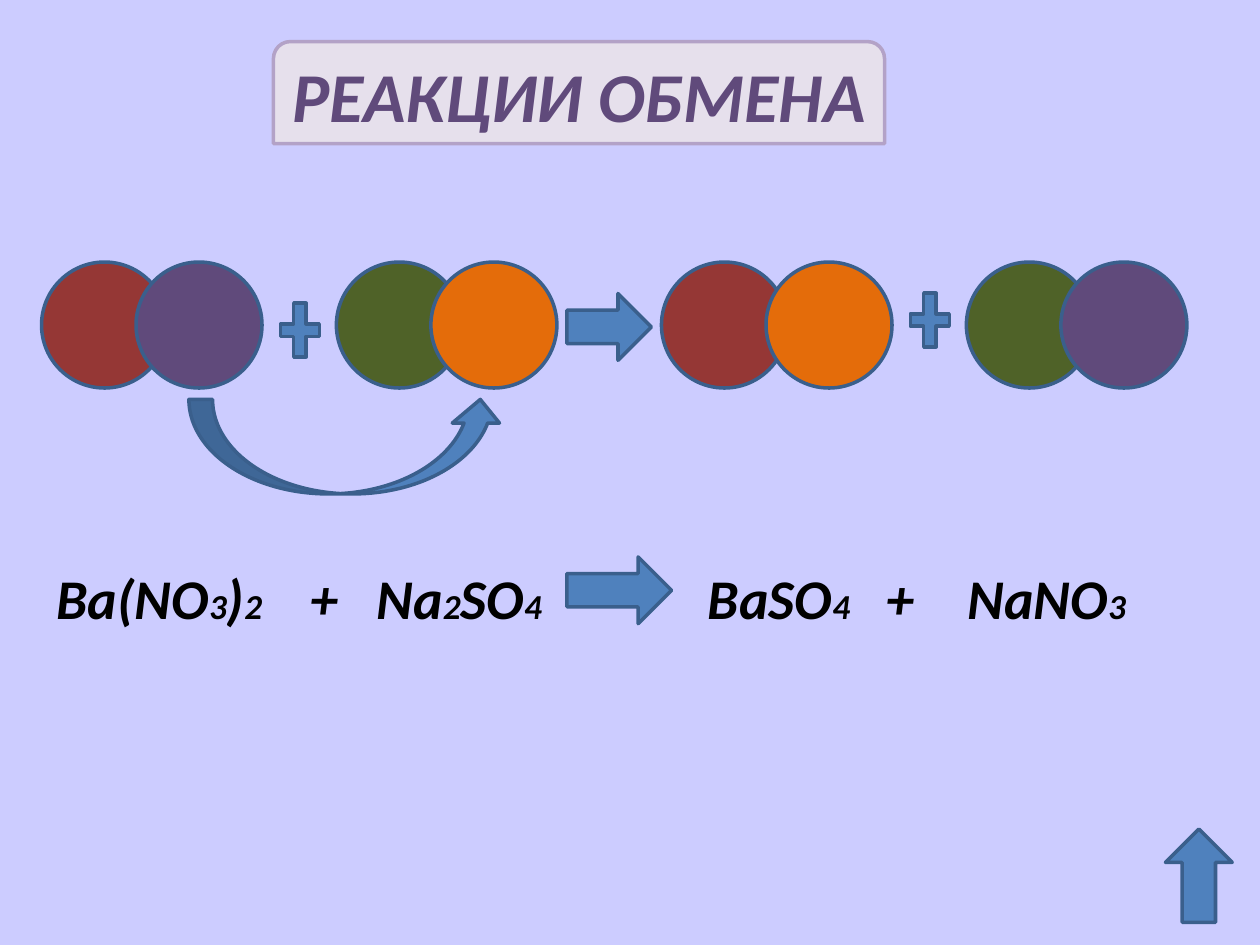
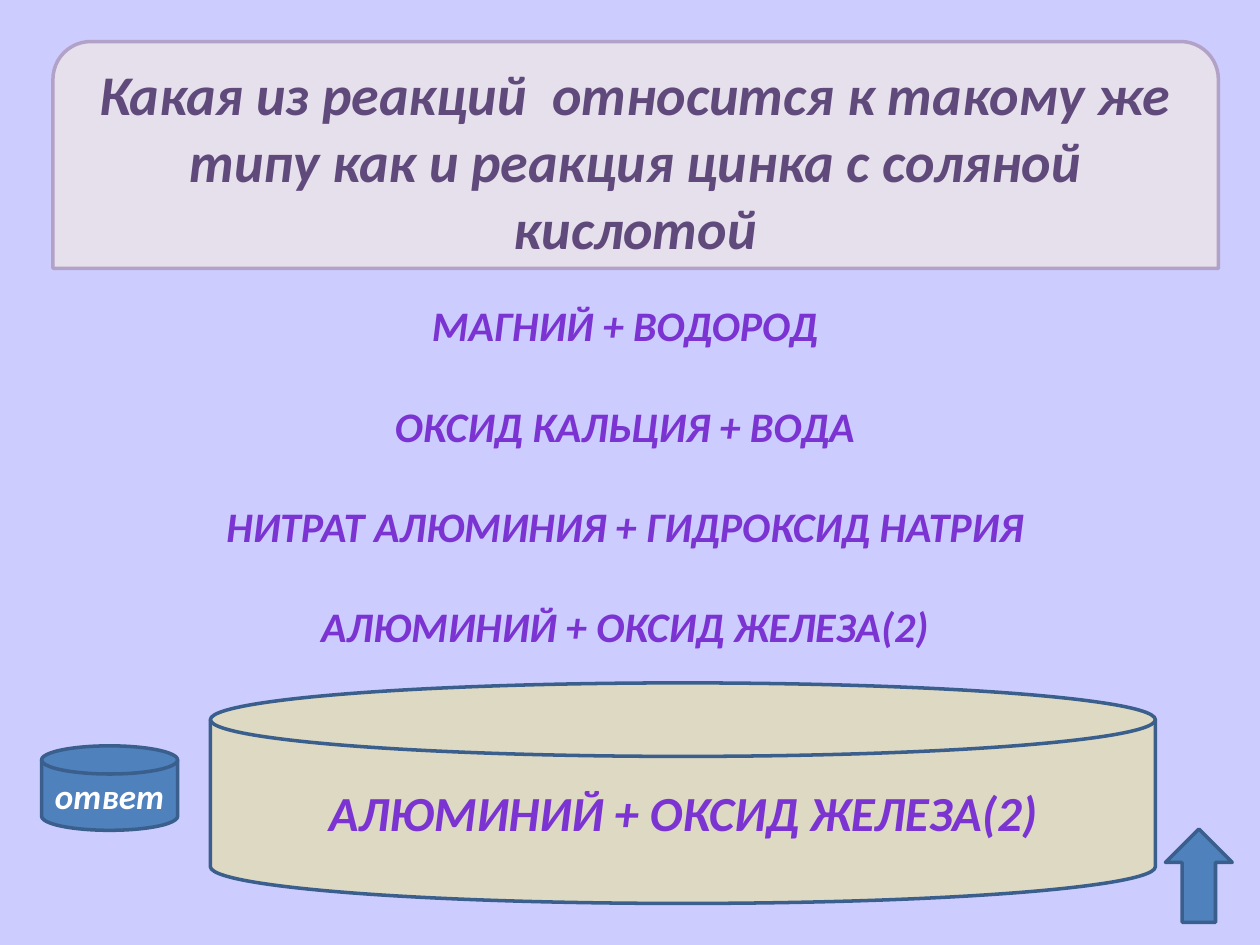
from itertools import groupby

from pptx import Presentation
from pptx.dml.color import RGBColor
from pptx.enum.shapes import MSO_SHAPE as Preset
from pptx.enum.text import MSO_ANCHOR as Anchor, MSO_AUTO_SIZE as AutoSize, PP_ALIGN as Align
from pptx.oxml import parse_xml
from pptx.oxml.ns import nsdecls
from pptx.util import Inches, Pt

COLORS = {
    "background": "CCCCFF", "banner": "E6E0EC", "banner_line": "B3A2C7",
    "title": "604A7B", "title_outline": "7EA6EA",
    "blue": "4F81BD", "blue_line": "3A5F8C", "sand": "DDD9C3",
    "red": "953735", "violet": "604A7B", "green": "4F6228", "orange": "E46C0A",
    "answer_outline": "5E457C", "black": "000000", "white": "FFFFFF",
}
FONT = "Calibri"
ANSWER_GRADIENT = [(0, "3D1B67"), (43, "7B34D2"), (48, "7330C4"), (100, "3D1B67")]
TITLE_STYLE = {"color": "title", "outline": ("title_outline", 2.48)}
ANSWER_STYLE = {"gradient": ANSWER_GRADIENT, "outline": ("answer_outline", 0.71)}

EXCHANGE_TITLE = "РЕАКЦИИ ОБМЕНА"
MOLECULES = [
    (0.33, 0.75, "red", "violet"),
    (2.67, 0.75, "green", "orange"),
    (5.25, 0.83, "red", "orange"),
    (7.67, 0.75, "green", "violet"),
]
EXCHANGE_SIGNS = [
    (Preset.MATH_PLUS, (2.17, 2.33, 0.42, 0.58)),
    (Preset.MATH_PLUS, (7.17, 2.25, 0.42, 0.58)),
    (Preset.RIGHT_ARROW, (4.5, 2.33, 0.67, 0.53)),
    (Preset.CURVED_UP_ARROW, (1.5, 3.17, 2.5, 0.75)),
    (Preset.RIGHT_ARROW, (4.5, 4.42, 0.83, 0.53)),
]
EQUATION = ["Ba(NO3)2", "+", "Na2SO4", "BaSO4", "+", "NaNO3"]
EQUATION_TABS = [2.12, 2.64, 5.27, 6.69, 7.33]

QUESTION = "Какая из реакций  относится к такому же типу как и реакция цинка с соляной кислотой"
REACTIONS = [
    "МАГНИЙ + ВОДОРОД",
    "ОКСИД КАЛЬЦИЯ + ВОДА",
    "НИТРАТ АЛЮМИНИЯ + ГИДРОКСИД НАТРИЯ",
    "АЛЮМИНИЙ + ОКСИД ЖЕЛЕЗА(2)",
]
ANSWER_LABEL = "ответ"


def rgb(name):
    return RGBColor.from_string(COLORS[name])


def box(values):
    return [Inches(value) for value in values]


def place(shape, values):
    shape.left, shape.top, shape.width, shape.height = box(values)


def add_text(paragraph, text, size=32, color="black", gradient=None, outline=None, align=None):
    if align is not None:
        paragraph.alignment = align
    run = paragraph.add_run()
    run.text = text
    font = run.font
    font.name, font.size, font.bold, font.italic = FONT, Pt(size), True, True
    properties = run._r.get_or_add_rPr()
    if gradient:
        stops = "".join(
            f'<a:gs pos="{position * 1000}"><a:srgbClr val="{value}"/></a:gs>'
            for position, value in gradient
        )
        properties.insert(0, parse_xml(
            f'<a:gradFill {nsdecls("a")}><a:gsLst>{stops}</a:gsLst>'
            '<a:lin ang="5400000" scaled="0"/></a:gradFill>'
        ))
    else:
        font.color.rgb = rgb(color)
    if outline:
        name, width = outline
        properties.insert(0, parse_xml(
            f'<a:ln {nsdecls("a")} w="{Pt(width)}"><a:solidFill>'
            f'<a:srgbClr val="{COLORS[name]}"/></a:solidFill></a:ln>'
        ))


def add_shape(slide, preset, position, fill="blue", line="blue_line"):
    shape = slide.shapes.add_shape(preset, *box(position))
    shape.shadow.inherit = False
    shape.fill.solid()
    shape.fill.fore_color.rgb = rgb(fill)
    shape.line.color.rgb = rgb(line)
    shape.line.width = Pt(2)
    return shape


def prepare_frame(shape, wrap=True):
    frame = shape.text_frame
    frame.auto_size = AutoSize.NONE
    frame.word_wrap = wrap
    frame.vertical_anchor = Anchor.TOP
    return frame


def add_title(slide, text, position, size, wrap=True):
    banner = add_shape(slide, Preset.ROUND_2_SAME_RECTANGLE, position, "banner", "banner_line")
    slide.shapes._spTree.insert(2, banner._element)
    left, top, width, height = position
    inset = height * 0.05
    title = slide.shapes.title
    place(title, (left + inset, top + inset, width - 2 * inset, height - inset))
    frame = prepare_frame(title, wrap)
    add_text(frame.paragraphs[0], text, size=size, align=Align.CENTER, **TITLE_STYLE)


def add_return_arrow(slide):
    add_shape(slide, Preset.UP_ARROW, (9.25, 6.58, 0.53, 0.74))


def add_disk(slide, position, text, fill, **style):
    disk = add_shape(slide, Preset.FLOWCHART_MAGNETIC_DISK, position, fill)
    disk.text_frame.word_wrap = True
    add_text(disk.text_frame.paragraphs[0], text, align=Align.CENTER, **style)


def add_equation(slide):
    frame = prepare_frame(slide.shapes.add_textbox(*box((0.35, 4.42, 9.5, 0.64))))
    paragraph = frame.paragraphs[0]
    tabs = "".join(f'<a:tab pos="{Inches(tab - 0.1)}" algn="l"/>' for tab in EQUATION_TABS)
    paragraph._p.get_or_add_pPr().append(
        parse_xml(f'<a:tabLst {nsdecls("a")}>{tabs}</a:tabLst>')
    )
    for is_index, characters in groupby("\t".join(EQUATION), str.isdigit):
        add_text(paragraph, "".join(characters), size=20 if is_index else 32)


def build_exchange_slide(presentation):
    slide = presentation.slides.add_slide(presentation.slide_layouts[5])
    for left, step, first, second in MOLECULES:
        for x, color in ((left, first), (left + step, second)):
            add_shape(slide, Preset.FLOWCHART_CONNECTOR, (x, 2.08, 1, 1), color)
    add_title(slide, EXCHANGE_TITLE, (2.17, 0.33, 4.85, 0.81), 40, wrap=False)
    for preset, position in EXCHANGE_SIGNS:
        add_shape(slide, preset, position)
    add_equation(slide)
    add_return_arrow(slide)


def build_question_slide(presentation):
    slide = presentation.slides.add_slide(presentation.slide_layouts[1])
    add_title(slide, QUESTION, (0.42, 0.33, 9.25, 1.8), 32)
    body = slide.placeholders[1]
    place(body, (1.17, 2.33, 7.58, 2.93))
    frame = prepare_frame(body)
    for index, reaction in enumerate(REACTIONS):
        paragraph = frame.add_paragraph() if index else frame.paragraphs[0]
        paragraph.space_before = Pt(0)
        paragraph.space_after = Pt(28.5)
        properties = paragraph._p.get_or_add_pPr()
        properties.set("marL", "0")
        properties.set("indent", "0")
        properties.append(parse_xml(f'<a:buNone {nsdecls("a")}/>'))
        add_text(paragraph, reaction, size=24, align=Align.CENTER, **ANSWER_STYLE)
    add_disk(slide, (1.67, 5.42, 7.5, 1.75), REACTIONS[-1], "sand", size=28, **ANSWER_STYLE)
    add_disk(slide, (0.33, 5.92, 1.08, 0.67), ANSWER_LABEL, "blue", size=20, color="white")
    add_return_arrow(slide)


def main():
    presentation = Presentation()
    presentation.slide_width, presentation.slide_height = Inches(10), Inches(7.5)
    background = presentation.slide_master.background.fill
    background.solid()
    background.fore_color.rgb = rgb("background")
    build_exchange_slide(presentation)
    build_question_slide(presentation)
    presentation.save("out.pptx")


if __name__ == "__main__":
    main()
